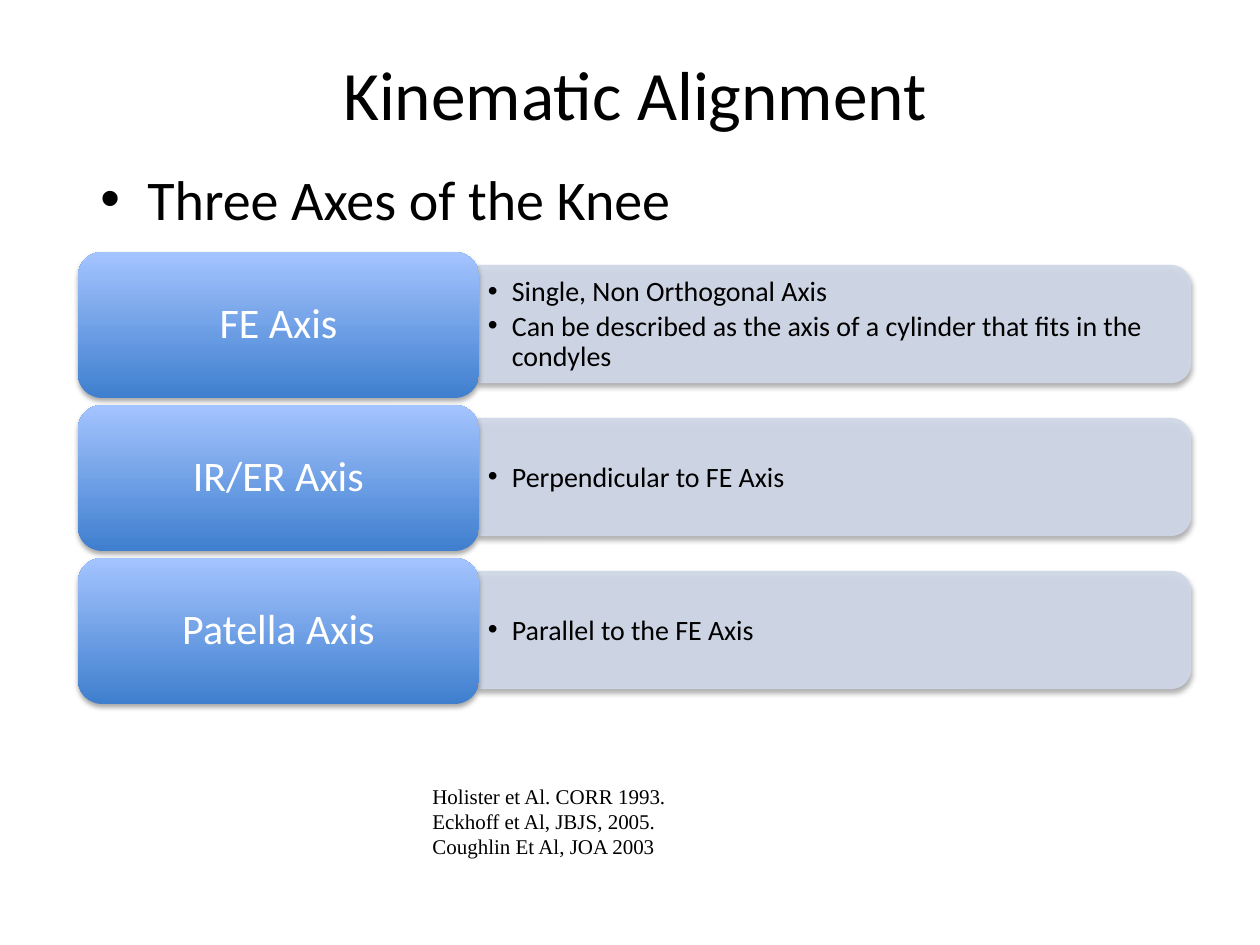
from dataclasses import dataclass

from lxml.etree import SubElement
from pptx import Presentation
from pptx.dml.color import RGBColor
from pptx.enum.shapes import MSO_SHAPE
from pptx.enum.text import MSO_ANCHOR, PP_ALIGN
from pptx.oxml.ns import qn
from pptx.util import Emu, Pt

EMU_PER_INCH = 914400
PX_PER_INCH = 126
SANS = "Calibri"
SERIF = "Times New Roman"
BLACK = "000000"
WHITE = "FFFFFF"
PANEL_COLOR = "D0D8E8"
LABEL_BOTTOM = "3F7FCE"
LABEL_TOP = "A4C4FF"
ROW_TOP = 252
ROW_PITCH = 153


@dataclass(frozen=True)
class Box:
    left: int
    top: int
    width: int
    height: int


@dataclass(frozen=True)
class TextStyle:
    size: float
    color: str = BLACK
    font: str = SANS
    align: PP_ALIGN = PP_ALIGN.LEFT
    line_spacing: float = 1.0
    space_after: float = 0
    bullet_indent: int = 0


@dataclass(frozen=True)
class AxisRow:
    label: str
    points: tuple[str, ...]


TITLE = TextStyle(39.6, align=PP_ALIGN.CENTER)
HEADING = TextStyle(32, bullet_indent=47)
LABEL = TextStyle(24, WHITE, align=PP_ALIGN.CENTER, line_spacing=0.9)
POINT = TextStyle(16, line_spacing=0.9, space_after=2.4, bullet_indent=24)
CITATION = TextStyle(12, font=SERIF)

ROWS = (
    AxisRow("FE Axis", (
        "Single, Non Orthogonal Axis",
        "Can be described as the axis of a cylinder that fits in the condyles",
    )),
    AxisRow("IR/ER Axis", ("Perpendicular to FE Axis",)),
    AxisRow("Patella Axis", ("Parallel to the FE Axis",)),
)
CITATIONS = (
    "Holister et Al. CORR 1993.",
    "Eckhoff et Al, JBJS, 2005.",
    "Coughlin Et Al, JOA 2003",
)


def px(length: int) -> Emu:
    return Emu(round(length * EMU_PER_INCH / PX_PER_INCH))


def rgb(color: str) -> RGBColor:
    return RGBColor.from_string(color)


def place(box: Box) -> tuple[Emu, Emu, Emu, Emu]:
    return px(box.left), px(box.top), px(box.width), px(box.height)


def add_bullet(paragraph, indent: int) -> None:
    properties = paragraph._p.get_or_add_pPr()
    properties.set("marL", str(px(indent)))
    properties.set("indent", str(-px(indent)))
    SubElement(properties, qn("a:buFont")).set("typeface", "Arial")
    SubElement(properties, qn("a:buChar")).set("char", "•")


def write(text_frame, lines: tuple[str, ...], style: TextStyle) -> None:
    for index, line in enumerate(lines):
        paragraph = text_frame.add_paragraph() if index else text_frame.paragraphs[0]
        if style.bullet_indent:
            add_bullet(paragraph, style.bullet_indent)
        paragraph.alignment = style.align
        paragraph.line_spacing = style.line_spacing
        paragraph.space_after = Pt(style.space_after)
        run = paragraph.add_run()
        run.text = line
        run.font.name = style.font
        run.font.size = Pt(style.size)
        run.font.color.rgb = rgb(style.color)


def add_text(slide, box: Box, lines: tuple[str, ...], style: TextStyle,
             anchor: MSO_ANCHOR = MSO_ANCHOR.TOP):
    text_frame = slide.shapes.add_textbox(*place(box)).text_frame
    text_frame.word_wrap = True
    text_frame.vertical_anchor = anchor
    write(text_frame, lines, style)
    return text_frame


def set_alpha(fill, percent: int) -> None:
    color = fill._xPr.find(qn("a:solidFill")).find(qn("a:srgbClr"))
    SubElement(color, qn("a:alpha")).set("val", str(percent * 1000))


def add_shadow(shape) -> None:
    shape.shadow.inherit = False
    effects = shape._element.spPr.find(qn("a:effectLst"))
    shadow = SubElement(effects, qn("a:outerShdw"), blurRad=str(Pt(3.1)),
                        dist=str(Pt(1.8)), dir="5400000", rotWithShape="0")
    color = SubElement(shadow, qn("a:srgbClr"), val=BLACK)
    SubElement(color, qn("a:alpha"), val="35000")


def add_panel(slide, box: Box) -> None:
    upright = Box(box.left + (box.width - box.height) // 2,
                  box.top + (box.height - box.width) // 2,
                  box.height, box.width)
    panel = slide.shapes.add_shape(MSO_SHAPE.ROUND_2_SAME_RECTANGLE, *place(upright))
    panel.rotation = 90
    panel.line.width = Pt(0.75)
    for fill in (panel.fill, panel.line.fill):
        fill.solid()
        fill.fore_color.rgb = rgb(PANEL_COLOR)
        set_alpha(fill, 90)
    add_shadow(panel)


def add_label(slide, box: Box, text: str) -> None:
    label = slide.shapes.add_shape(MSO_SHAPE.ROUNDED_RECTANGLE, *place(box))
    label.fill.gradient()
    label.fill.gradient_angle = 90
    for stop, color in zip(label.fill.gradient_stops, (LABEL_BOTTOM, LABEL_TOP)):
        stop.color.rgb = rgb(color)
    label.line.fill.background()
    add_shadow(label)
    label.text_frame.word_wrap = True
    label.text_frame.vertical_anchor = MSO_ANCHOR.MIDDLE
    write(label.text_frame, (text,), LABEL)


def add_axis_row(slide, row: AxisRow, top: int) -> None:
    add_panel(slide, Box(479, top + 14, 712, 117))
    points = add_text(slide, Box(479, top + 20, 706, 106), row.points, POINT,
                      MSO_ANCHOR.MIDDLE)
    points.margin_left = points.margin_right = px(9)
    points.margin_top = points.margin_bottom = px(4)
    add_label(slide, Box(78, top, 401, 146), row.label)


def main() -> None:
    presentation = Presentation()
    presentation.slide_width = px(1260)
    presentation.slide_height = px(945)
    slide = presentation.slides.add_slide(presentation.slide_layouts[6])
    add_text(slide, Box(88, 50, 1110, 86), ("Kinematic Alignment ",), TITLE,
             MSO_ANCHOR.MIDDLE)
    add_text(slide, Box(88, 158, 1108, 547), ("Three Axes of the Knee",), HEADING)
    for index, row in enumerate(ROWS):
        add_axis_row(slide, row, ROW_TOP + index * ROW_PITCH)
    add_text(slide, Box(420, 777, 415, 149), CITATIONS, CITATION)
    presentation.save("out.pptx")


if __name__ == "__main__":
    main()
